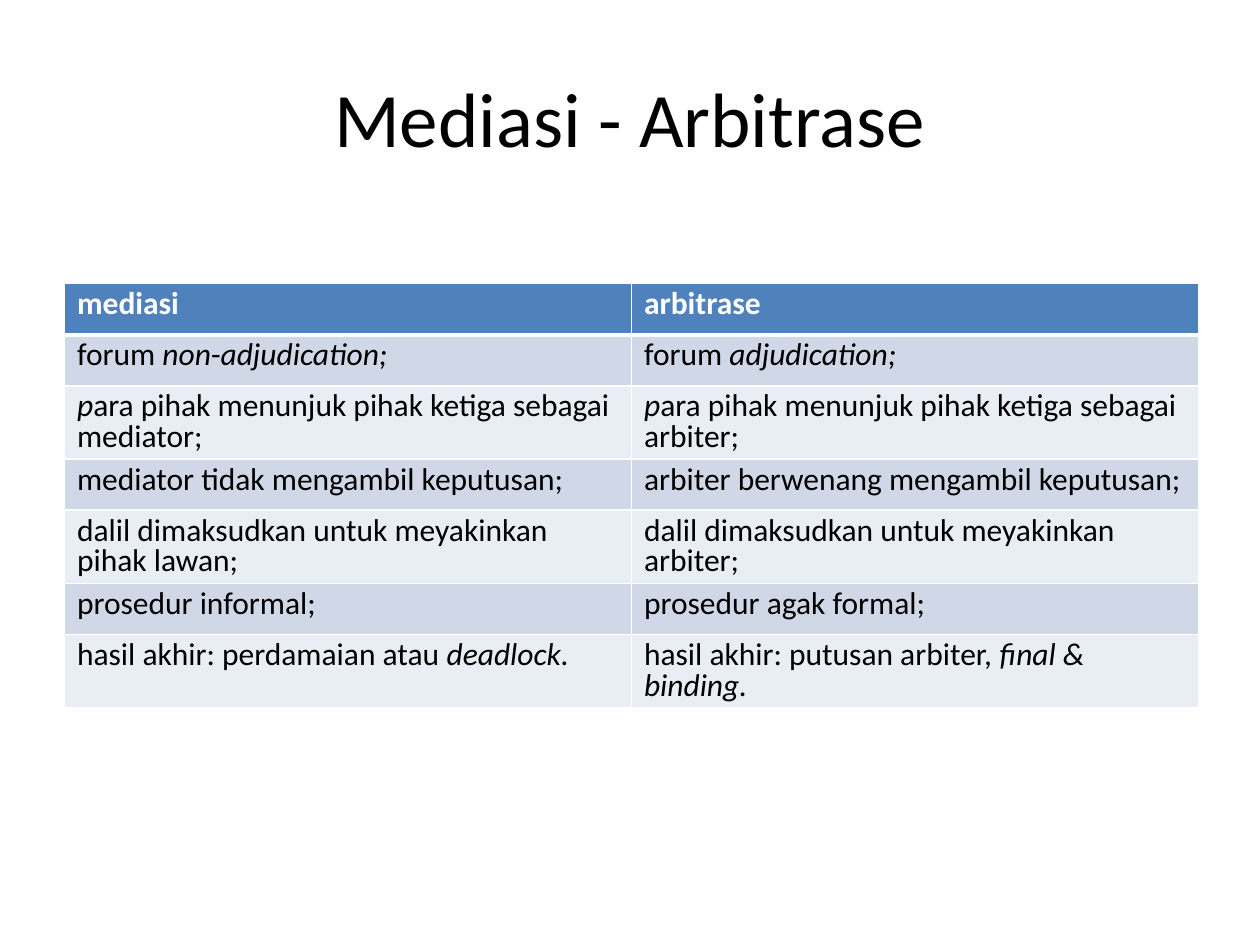
from lxml import etree
from pptx import Presentation
from pptx.dml.color import RGBColor
from pptx.enum.text import MSO_ANCHOR, PP_ALIGN
from pptx.oxml.ns import qn
from pptx.util import Cm, Pt

MIDDLE = MSO_ANCHOR.MIDDLE
CENTER = PP_ALIGN.CENTER

BLACK = RGBColor(0x00, 0x00, 0x00)
WHITE = RGBColor(0xFF, 0xFF, 0xFF)
HEADER_BLUE = RGBColor(0x4F, 0x81, 0xBD)
BAND_DARK = RGBColor(0xD0, 0xD8, 0xE8)
BAND_LIGHT = RGBColor(0xE9, 0xED, 0xF4)

# Asterisks enclose italic words.
COMPARISON = [
    ("mediasi", "arbitrase"),
    ("forum *non*-*adjudication;*", "forum *adjudication;*"),
    ("*p*ara pihak menunjuk pihak ketiga sebagai mediator;",
     "*p*ara pihak menunjuk pihak ketiga sebagai arbiter;"),
    ("mediator tidak mengambil keputusan;",
     "arbiter berwenang mengambil keputusan;"),
    ("dalil dimaksudkan untuk meyakinkan pihak lawan;",
     "dalil dimaksudkan untuk meyakinkan arbiter;"),
    ("prosedur informal;", "prosedur agak formal;"),
    ("hasil akhir: perdamaian atau *deadlock.*",
     "hasil akhir: putusan arbiter, *final & binding.*"),
]


class SlideBuilder:
    font_name = "Calibri"
    title_size = Pt(44)
    cell_size = Pt(18)
    cell_spacing = {"line_spacing": 0.8, "space_before": Pt(4.6)}

    def __init__(self, slide):
        self.slide = slide

    def add_runs(self, paragraph, marked_text, size, color, bold=False):
        """Add runs, switching italics at each asterisk."""
        for index, words in enumerate(marked_text.split("*")):
            if not words:
                continue
            run = paragraph.add_run()
            run.text = words
            font_format = {"name": self.font_name, "size": size,
                           "bold": bold, "italic": index % 2 == 1}
            for attribute, value in font_format.items():
                setattr(run.font, attribute, value)
            run.font.color.rgb = color

    def title(self, text, left, top, width, height):
        frame = self.slide.shapes.add_textbox(left, top, width, height).text_frame
        frame.word_wrap = True
        frame.vertical_anchor = MIDDLE
        heading = frame.paragraphs[0]
        heading.alignment = CENTER
        self.add_runs(heading, text, self.title_size, BLACK)

    def borders(self, cell, bottom_width):
        """Draw white edges, placed ahead of the cell fill."""
        properties = cell._tc.get_or_add_tcPr()
        widths = {"a:lnL": 1, "a:lnR": 1, "a:lnT": 1, "a:lnB": bottom_width}
        for position, (tag, width) in enumerate(widths.items()):
            edge = etree.Element(qn(tag), w=str(Pt(width)))
            fill = etree.SubElement(edge, qn("a:solidFill"))
            etree.SubElement(fill, qn("a:srgbClr"), val=str(WHITE))
            properties.insert(position, edge)

    def cell(self, cell, text, row_number):
        is_header = row_number == 0
        band = BAND_DARK if row_number % 2 else BAND_LIGHT
        cell.fill.solid()
        cell.fill.fore_color.rgb = HEADER_BLUE if is_header else band
        paragraph = cell.text_frame.paragraphs[0]
        for attribute, value in self.cell_spacing.items():
            setattr(paragraph, attribute, value)
        self.add_runs(paragraph, text, self.cell_size,
                      WHITE if is_header else BLACK, bold=is_header)
        self.borders(cell, bottom_width=3 if is_header else 1)

    def table(self, rows, left, top, width, row_height):
        table = self.slide.shapes.add_table(
            len(rows), len(rows[0]), left, top, width, row_height * len(rows)
        ).table
        for row_number, texts in enumerate(rows):
            for column, text in enumerate(texts):
                self.cell(table.cell(row_number, column), text, row_number)


def main():
    presentation = Presentation()
    presentation.slide_width = Cm(25.4)
    presentation.slide_height = Cm(19.05)
    builder = SlideBuilder(
        presentation.slides.add_slide(presentation.slide_layouts[6]))
    builder.title("Mediasi - Arbitrase", Cm(1.27), Cm(0.76), Cm(22.86), Cm(3.18))
    builder.table(COMPARISON, Cm(1.3), Cm(5.72), Cm(22.86), Cm(1.03))
    presentation.save("out.pptx")


if __name__ == "__main__":
    main()
